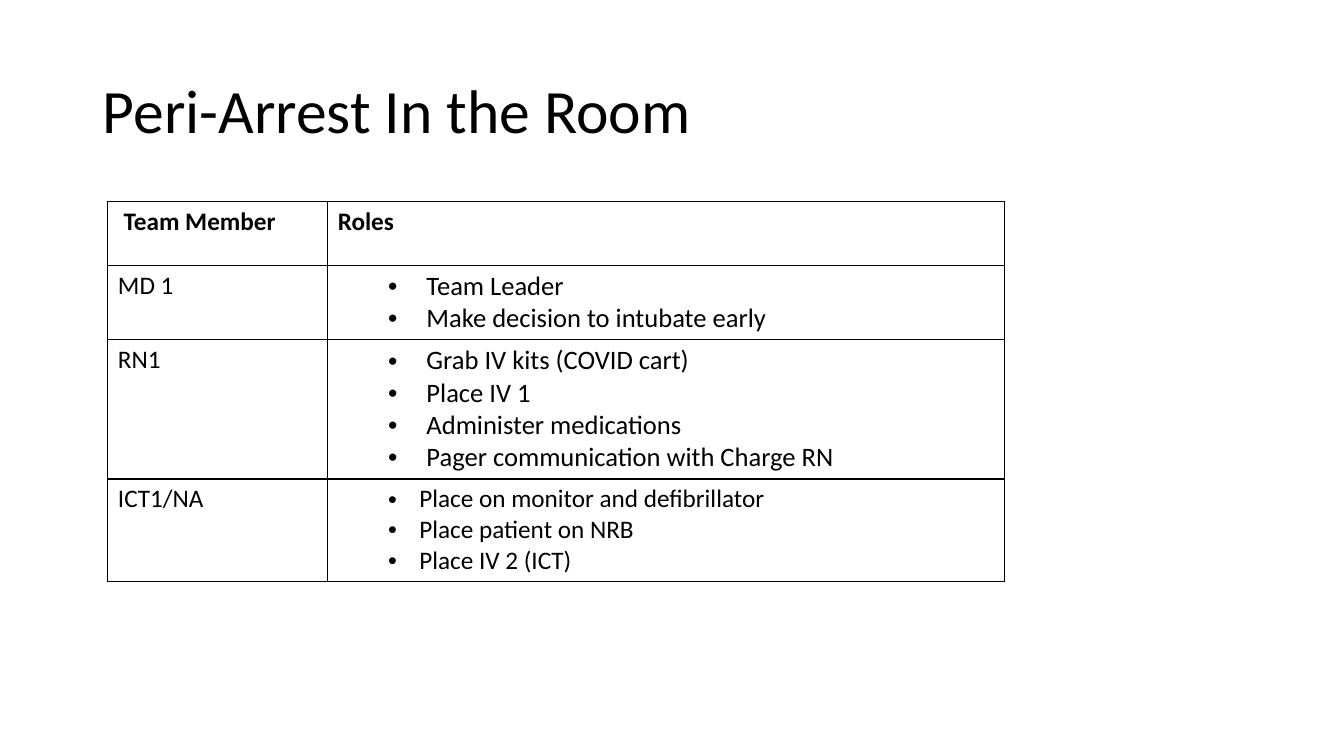
import dataclasses

import pptx
import pptx.dml.color
import pptx.enum.text
import pptx.oxml.ns
import pptx.util
from lxml import etree

Inches = pptx.util.Inches
Pt = pptx.util.Pt
qn = pptx.oxml.ns.qn


@dataclasses.dataclass(frozen=True)
class Theme:
    font: str = "Calibri"
    ink: str = "000000"
    title_size: int = 44
    label_size: int = 18
    role_size: int = 19
    border_width: int = 1


def write_text(paragraph, text, *, theme, size, bold=False):
    run = paragraph.add_run()
    run.text = text
    run.font.name = theme.font
    run.font.size = Pt(size)
    run.font.bold = bold
    run.font.color.rgb = pptx.dml.color.RGBColor.from_string(theme.ink)


class SlideBuilder:
    def __init__(self, slide, theme):
        self.slide = slide
        self.theme = theme

    def title(self, text, left, top, width, height):
        heading = self.slide.shapes.title
        heading.left, heading.top = Inches(left), Inches(top)
        heading.width, heading.height = Inches(width), Inches(height)
        frame = heading.text_frame
        frame.word_wrap = True
        frame.auto_size = pptx.enum.text.MSO_AUTO_SIZE.NONE
        frame.vertical_anchor = pptx.enum.text.MSO_ANCHOR.MIDDLE
        paragraph = frame.paragraphs[0]
        paragraph.alignment = pptx.enum.text.PP_ALIGN.LEFT
        paragraph.line_spacing = 0.9
        write_text(paragraph, text, theme=self.theme, size=self.theme.title_size)

    def table(self, left, top, column_widths, row_heights):
        grid = self.slide.shapes.add_table(
            len(row_heights), len(column_widths), Inches(left), Inches(top),
            Inches(sum(column_widths)), Inches(sum(row_heights))).table
        grid.first_row = grid.horz_banding = False
        for column, width in zip(grid.columns, column_widths):
            column.width = Inches(width)
        for row, height in zip(grid.rows, row_heights):
            row.height = Inches(height)
        for cell in grid.iter_cells():
            self.border(cell)
            cell.fill.background()
        return grid

    def border(self, cell):
        properties = cell._tc.get_or_add_tcPr()
        for side in ("a:lnL", "a:lnR", "a:lnT", "a:lnB"):
            line = etree.SubElement(properties, qn(side),
                                    w=str(Pt(self.theme.border_width)))
            fill = etree.SubElement(line, qn("a:solidFill"))
            etree.SubElement(fill, qn("a:srgbClr"), val=self.theme.ink)

    def label(self, cell, text, bold=False):
        write_text(cell.text_frame.paragraphs[0], text, theme=self.theme,
                   size=self.theme.label_size, bold=bold)

    def bullets(self, cell, items, size, indent, hanging):
        frame = cell.text_frame
        for index, item in enumerate(items):
            paragraph = frame.add_paragraph() if index else frame.paragraphs[0]
            paragraph.level = 1
            properties = paragraph._p.get_or_add_pPr()
            properties.set("marL", str(Inches(indent)))
            properties.set("indent", str(-Inches(hanging)))
            etree.SubElement(properties, qn("a:buFont"), typeface="Arial")
            etree.SubElement(properties, qn("a:buChar"), char="•")
            write_text(paragraph, item, theme=self.theme, size=size)


def main():
    deck = pptx.Presentation()
    deck.slide_width, deck.slide_height = Inches(13.33), Inches(7.5)
    theme = Theme()
    builder = SlideBuilder(deck.slides.add_slide(deck.slide_layouts[5]), theme)

    # Title
    builder.title("Peri-Arrest In the Room", 0.92, 0.4, 11.5, 1.45)

    # Team members, their roles, and the size, indent and hang of each list
    wide_list = (theme.role_size, 0.88, 0.38)
    narrow_list = (theme.label_size, 0.81, 0.31)
    team = [
        ("MD 1", ["Team Leader", "Make decision to intubate early"], wide_list),
        ("RN1", ["Grab IV kits (COVID cart)", "Place IV 1",
                 "Administer medications",
                 "Pager communication with Charge RN"], wide_list),
        ("ICT1/NA", ["Place on monitor and defibrillator",
                     "Place patient on NRB", "Place IV 2 (ICT)"], narrow_list),
    ]

    # Role table
    role_table = builder.table(1.07, 2, [2.18, 6.71], [0.63, 0.74, 1.38, 1.01])
    for column, heading in enumerate([" Team Member", "Roles"]):
        builder.label(role_table.cell(0, column), heading, bold=True)
    for row, (member, roles, list_format) in enumerate(team, start=1):
        builder.label(role_table.cell(row, 0), member)
        builder.bullets(role_table.cell(row, 1), roles, *list_format)

    deck.save("out.pptx")


if __name__ == "__main__":
    main()
